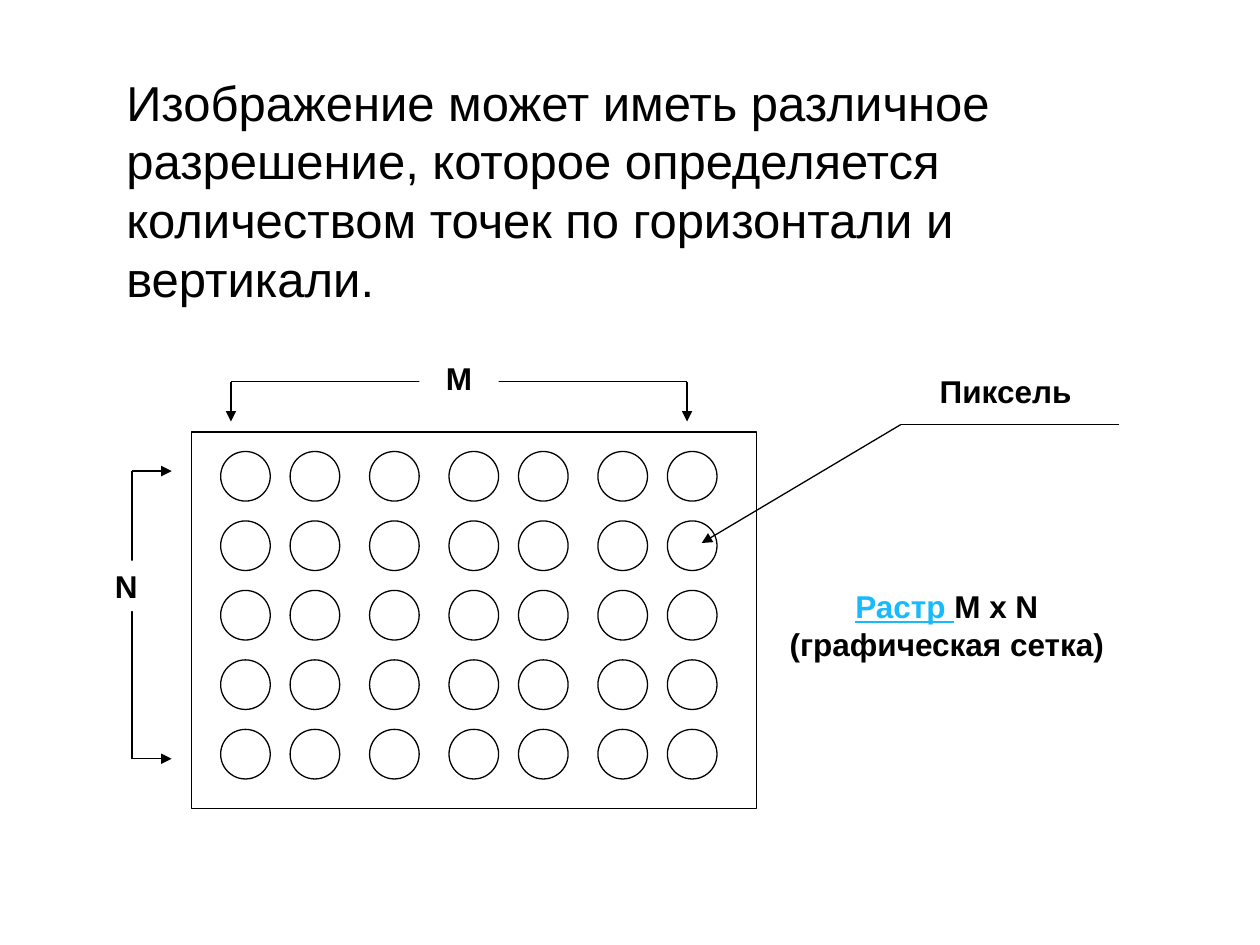
from itertools import accumulate

from lxml import etree
from pptx import Presentation
from pptx.dml.color import RGBColor
from pptx.enum.shapes import MSO_CONNECTOR, MSO_SHAPE
from pptx.enum.text import MSO_ANCHOR, MSO_AUTO_SIZE, PP_ALIGN
from pptx.oxml.ns import qn
from pptx.util import Pt

STRAIGHT = MSO_CONNECTOR.STRAIGHT
RECTANGLE, OVAL = MSO_SHAPE.RECTANGLE, MSO_SHAPE.OVAL
TOP, FIXED = MSO_ANCHOR.TOP, MSO_AUTO_SIZE.NONE
LEFT, CENTER = PP_ALIGN.LEFT, PP_ALIGN.CENTER

TITLE_ONLY = 5
DOT_SIZE = 28.35
NARROW, WIDE = 39.7, 45.4
COLUMNS = list(accumulate([126.1, NARROW, WIDE, WIDE, NARROW, WIDE, NARROW]))
ROWS = [258 + NARROW * row for row in range(5)]


def color(value):
    return RGBColor.from_string(value)


class RasterSlide:
    font = "Arial"
    ink = "000000"
    paper = "FFFFFF"
    accent = "17BBFD"
    line_width = 0.75

    def __init__(self, deck):
        self.page = deck.slides.add_slide(deck.slide_layouts[TITLE_ONLY])

    def format_text(self, box, size, bold, align):
        frame = box.text_frame
        frame.word_wrap = True
        frame.auto_size = FIXED
        frame.vertical_anchor = TOP
        for para in frame.paragraphs:
            para.alignment = align
            for span in para.runs:
                span.font.name = self.font
                span.font.size = Pt(size)
                span.font.bold = bold
                span.font.color.rgb = color(self.ink)

    def title(self, text, left, top, width, height):
        box = self.page.shapes.title
        box.left, box.top, box.width, box.height = map(Pt, (left, top, width, height))
        box.text_frame.text = text
        self.format_text(box, 28, False, LEFT)

    def label(self, text, left, top, width, height=28.8, filled=False):
        box = self.page.shapes.add_textbox(*map(Pt, (left, top, width, height)))
        if filled:
            box.fill.solid()
            box.fill.fore_color.rgb = color(self.paper)
        box.text_frame.text = text
        self.format_text(box, 18, True, CENTER)
        return box

    def raster_label(self, left, top, width, height):
        """Two centred lines whose first word is underlined in the accent colour."""
        box = self.label("Растр \n(графическая сетка)", left, top, width, height)
        first = box.text_frame.paragraphs[0]
        first.add_run().text = "M x N"
        self.format_text(box, 18, True, CENTER)
        first.runs[0].font.underline = True
        first.runs[0].font.color.rgb = color(self.accent)

    def outline(self, kind, left, top, width, height):
        shape = self.page.shapes.add_shape(kind, *map(Pt, (left, top, width, height)))
        shape.shadow.inherit = False
        shape.fill.background()
        shape.line.color.rgb = color(self.ink)
        shape.line.width = Pt(self.line_width)

    def line(self, start, end, arrow=False):
        connector = self.page.shapes.add_connector(STRAIGHT, *map(Pt, start + end))
        connector.line.color.rgb = color(self.ink)
        connector.line.width = Pt(self.line_width)
        if arrow:
            etree.SubElement(connector.line._get_or_add_ln(), qn("a:tailEnd"), type="triangle")
        etree.SubElement(connector._element.spPr, qn("a:effectLst"))

    def bracket(self, start, end, reach):
        """A line with an arrow of the given (x, y) reach at each end."""
        self.line(start, end)
        for x, y in (start, end):
            self.line((x, y), (x + reach[0], y + reach[1]), arrow=True)


def main():
    deck = Presentation()
    deck.slide_width, deck.slide_height = Pt(720), Pt(540)
    slide = RasterSlide(deck)

    slide.title(
        "Изображение может иметь различное разрешение, которое определяется "
        "количеством точек по горизонтали и вертикали.",
        65, 37.6, 572.4, 142,
    )

    slide.outline(RECTANGLE, 109.4, 246.8, 323.1, 215.3)
    for left in COLUMNS:
        for top in ROWS:
            slide.outline(OVAL, left, top, DOT_SIZE, DOT_SIZE)

    slide.bracket((132, 218.2), (392.6, 218.2), (0, 22.7))
    slide.label("М", 239.6, 201.6, 45.4, filled=True)
    slide.bracket((75.4, 269.2), (75.4, 433.6), (22.7, 0))
    slide.label("N", 52.4, 320.4, 39.6, filled=True)

    bend = (514.8, 242.6)
    slide.line(bend, (401, 310.3), arrow=True)
    slide.line(bend, (639.4, 242.6))
    slide.label("Пиксель", 500.8, 208.8, 147.6)
    slide.raster_label(433.4, 331.9, 215.3, 72)

    deck.save("out.pptx")


if __name__ == "__main__":
    main()
